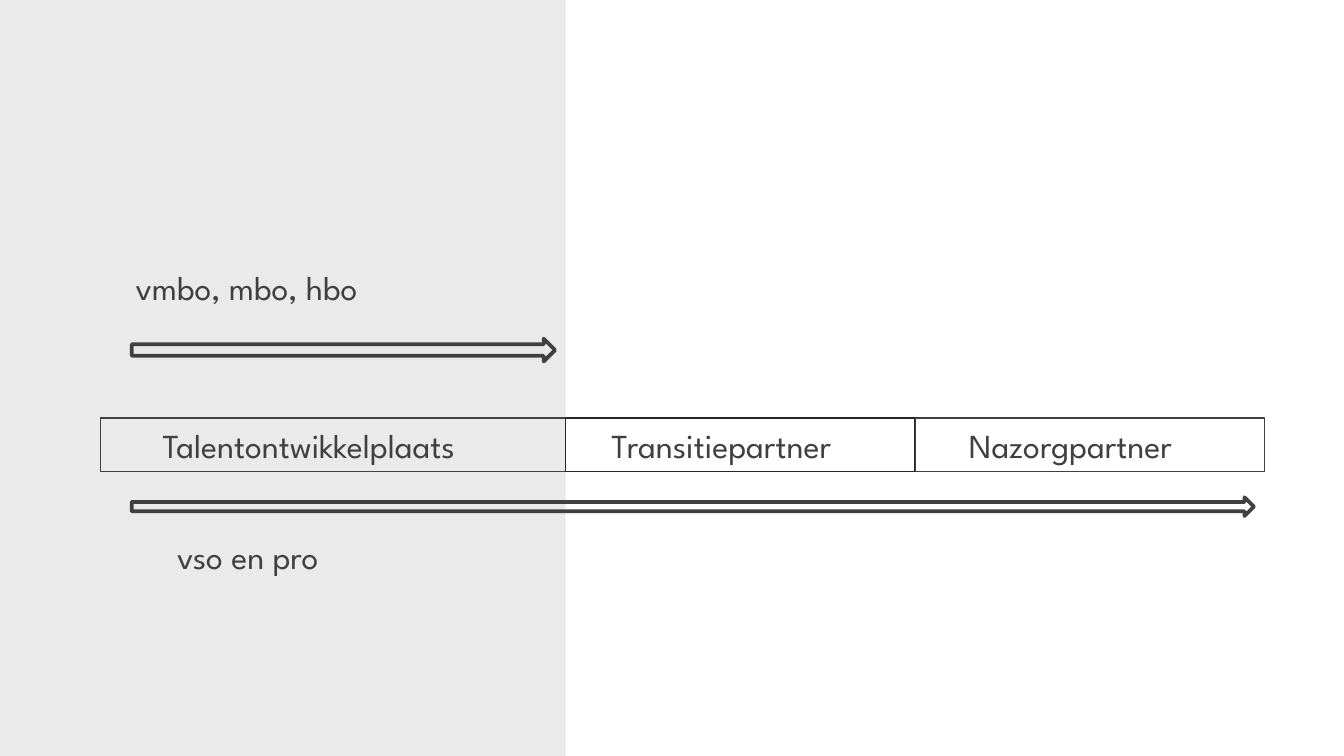
from typing import NamedTuple, Optional

from lxml.etree import SubElement
from pptx import Presentation
from pptx.dml.color import RGBColor
from pptx.enum.shapes import MSO_SHAPE as Shape
from pptx.enum.text import MSO_ANCHOR as Anchor, PP_ALIGN as Align
from pptx.oxml.ns import qn
from pptx.util import Inches, Pt

WIDTH, HEIGHT = Inches(10), Inches(5.625)
FONT, TEXT_SIZE = "League Spartan", 18
DARK, DARKER, GREY = "404040", "262626", "BFBFBF"
INSET = 1  # side margin of text, in columns


class Area(NamedTuple):
    """A place on a grid of 100 columns by 100 rows."""
    column: float
    row: float
    columns: float
    rows: float


class Phase(NamedTuple):
    text: str
    columns: float
    indent: float
    line: str


class Route(NamedTuple):
    text: str
    label: Area
    arrow: Area


BAR_LEFT, BAR_TOP, BAR_ROWS = 7.5, 55.29, 7.11
PHASES = [
    Phase("Talentontwikkelplaats", 34.6, 3.6, DARK),
    Phase("Transitiepartner", 26, 2.4, DARKER),
    Phase("Nazorgpartner", 26, 3, DARK),
]
ROUTES = [
    Route("vso en pro", Area(12.2, 69.87, 46.5, 7.29), Area(9.8, 65.78, 83.5, 2.49)),
    Route("vmbo, mbo, hbo", Area(9.1, 34.31, 46.5, 7.29), Area(9.8, 44.8, 31.5, 3.02)),
]


def across(columns: float) -> int:
    return round(WIDTH * columns / 100)


def down(rows: float) -> int:
    return round(HEIGHT * rows / 100)


def place(area: Area) -> tuple:
    return across(area.column), down(area.row), across(area.columns), down(area.rows)


def color(value: str) -> RGBColor:
    return RGBColor.from_string(value)


def add_outline(page, kind: Shape, area: Area, line: Optional[str], points: float = 0.75):
    """Add an unfilled shape, with a line if a colour is given."""
    box = page.shapes.add_shape(kind, *place(area))
    box.shadow.inherit = False
    box.fill.background()
    if line:
        box.line.color.rgb = color(line)
        box.line.width = Pt(points)
    else:
        box.line.fill.background()
    return box


def write(box, text: str, indent: float = 0) -> None:
    frame = box.text_frame
    frame.word_wrap = True
    frame.vertical_anchor = Anchor.MIDDLE
    frame.margin_left = across(INSET + indent)
    frame.margin_right = across(INSET)
    para = frame.paragraphs[0]
    para.text = text
    para.alignment = Align.LEFT
    para.font.name = FONT
    para.font.size = Pt(TEXT_SIZE)
    para.font.color.rgb = color(DARK)


def add_panel(page, area: Area, opacity: int) -> None:
    """Add a translucent grey panel."""
    panel = add_outline(page, Shape.RECTANGLE, area, None)
    panel.fill.solid()
    panel.fill.fore_color.rgb = color(GREY)
    tint = panel.fill._xPr.find(qn("a:solidFill"))[0]
    SubElement(tint, qn("a:alpha")).set("val", str(opacity * 1000))


def add_phases(page) -> None:
    left = BAR_LEFT
    for phase in PHASES:
        area = Area(left, BAR_TOP, phase.columns, BAR_ROWS)
        box = add_outline(page, Shape.RECTANGLE, area, phase.line)
        write(box, phase.text, phase.indent)
        left += phase.columns


def add_route(page, route: Route) -> None:
    add_outline(page, Shape.RIGHT_ARROW, route.arrow, DARK, 2)
    write(page.shapes.add_textbox(*place(route.label)), route.text)


def main() -> None:
    deck = Presentation()
    deck.slide_width, deck.slide_height = WIDTH, HEIGHT
    page = deck.slides.add_slide(deck.slide_layouts[6])

    # Panel behind the first phase
    add_panel(page, Area(0, 0, BAR_LEFT + PHASES[0].columns, 100), 32)

    # Bar of phases, then the school routes along it
    add_phases(page)
    for route in ROUTES:
        add_route(page, route)

    deck.save("out.pptx")


if __name__ == "__main__":
    main()
